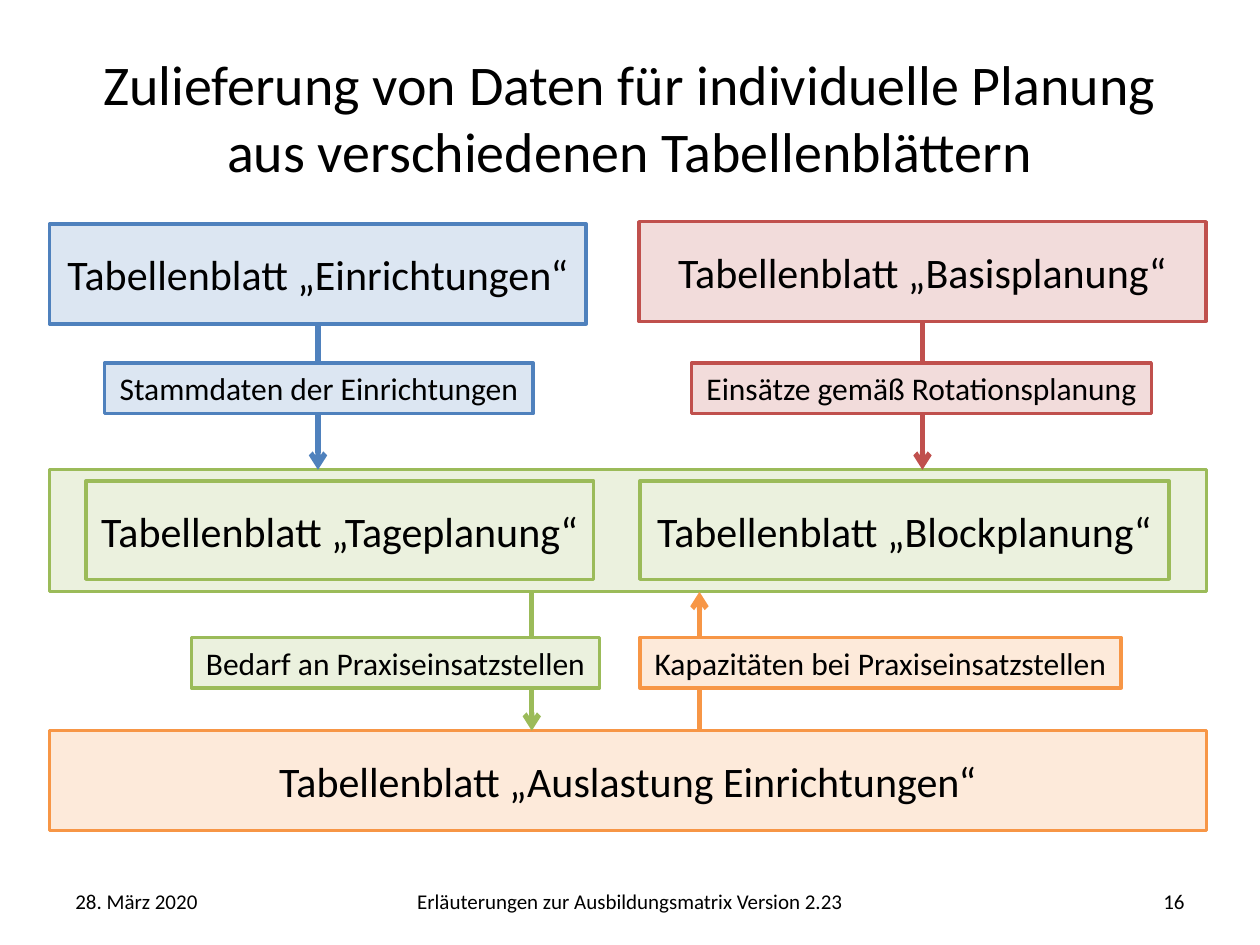
from lxml import etree
from pptx import Presentation
from pptx.dml.color import RGBColor
from pptx.enum.shapes import MSO_CONNECTOR, MSO_SHAPE
from pptx.enum.text import MSO_ANCHOR, MSO_AUTO_SIZE, PP_ALIGN
from pptx.oxml.ns import qn
from pptx.util import Cm, Pt

RECTANGLE = MSO_SHAPE.RECTANGLE
STRAIGHT = MSO_CONNECTOR.STRAIGHT
MIDDLE = MSO_ANCHOR.MIDDLE
GROW = MSO_AUTO_SIZE.SHAPE_TO_FIT_TEXT
LEFT, CENTER, RIGHT = PP_ALIGN.LEFT, PP_ALIGN.CENTER, PP_ALIGN.RIGHT
BOTTOM_SIDE = 2

FONT = "Calibri"
COLORS = {
    "text": "000000",
    "blue": "4F81BD", "blue_fill": "DCE6F2",
    "red": "C0504D", "red_fill": "F2DCDB",
    "green": "9BBB59", "green_fill": "EBF1DE",
    "orange": "F79646", "orange_fill": "FDEADA",
}

# Shared measures in cm
MARGIN, FULL_WIDTH = 1, 23.32
SHEET_HEIGHT, LABEL_HEIGHT = 2.01, 1.02
PLANNING_TOP, PLANNING_HEIGHT = 9.47, 2.46
PLANNING_BOTTOM = PLANNING_TOP + PLANNING_HEIGHT
CAPACITY_TOP = 14.73


def color(name):
    return RGBColor.from_string(COLORS[name])


def write_text(shape, text, size=24, align=CENTER, wrap=True):
    frame = shape.text_frame
    frame.word_wrap = wrap
    frame.vertical_anchor = MIDDLE
    paragraph = frame.paragraphs[0]
    paragraph.alignment = align
    run = paragraph.add_run()
    run.text = text
    run.font.name = FONT
    run.font.size = Pt(size)
    run.font.color.rgb = color("text")


def add_text(slide, text, left, top, width, height, **text_format):
    box = slide.shapes.add_textbox(Cm(left), Cm(top), Cm(width), Cm(height))
    write_text(box, text, **text_format)


def add_box(slide, hue, left, top, width, height):
    box = slide.shapes.add_shape(RECTANGLE, Cm(left), Cm(top), Cm(width), Cm(height))
    box.shadow.inherit = False
    box.fill.solid()
    box.fill.fore_color.rgb = color(hue + "_fill")
    box.line.color.rgb = color(hue)
    box.line.width = Pt(2)
    return box


def add_sheet(slide, name, hue, left, top, width, height=SHEET_HEIGHT):
    sheet = add_box(slide, hue, left, top, width, height)
    write_text(sheet, f"Tabellenblatt „{name}“")
    return sheet


def add_label(slide, text, hue, left, top, width):
    label = add_box(slide, hue, left, top, width, LABEL_HEIGHT)
    write_text(label, text, size=18, wrap=False)
    label.text_frame.auto_size = GROW


def add_arrow(slide, hue, x, start, end, source=None):
    arrow = slide.shapes.add_connector(STRAIGHT, Cm(x), Cm(start), Cm(x), Cm(end))
    if source is not None:
        arrow.begin_connect(source, BOTTOM_SIDE)
        arrow.end_x = arrow.begin_x
    arrow.line.color.rgb = color(hue)
    arrow.line.width = Pt(3)
    etree.SubElement(arrow.line._get_or_add_ln(), qn("a:tailEnd"), type="arrow")
    etree.SubElement(arrow._element.spPr, qn("a:effectLst"))


def main():
    prs = Presentation()
    prs.slide_width, prs.slide_height = Cm(25.4), Cm(19.05)
    slide = prs.slides.add_slide(prs.slide_layouts[6])

    # Title
    add_text(slide, "Zulieferung von Daten für individuelle Planung "
             "aus verschiedenen Tabellenblättern", 1.27, 0.76, 22.86, 3.18, size=32)

    # Individual planning: two sheets in a common frame
    add_box(slide, "green", MARGIN, PLANNING_TOP, FULL_WIDTH, PLANNING_HEIGHT)
    for name, left, width in (("Tageplanung", 1.73, 10.24),
                              ("Blockplanung", 12.9, 10.67)):
        add_sheet(slide, name, "green", left, 9.7, width, 1.98)

    # Supplying sheets and the sheet for capacity use
    facilities = add_sheet(slide, "Einrichtungen", "blue", MARGIN, 4.52, 10.82)
    base_plan = add_sheet(slide, "Basisplanung", "red", 12.88, 4.47, 11.43)
    add_sheet(slide, "Auslastung Einrichtungen", "orange",
              MARGIN, CAPACITY_TOP, FULL_WIDTH)

    # Data flows
    add_arrow(slide, "blue", 6.41, 6.53, PLANNING_TOP, source=facilities)
    add_arrow(slide, "red", 18.6, 6.48, PLANNING_TOP, source=base_plan)
    add_arrow(slide, "green", 10.72, PLANNING_BOTTOM, CAPACITY_TOP)
    add_arrow(slide, "orange", 14.1, CAPACITY_TOP, PLANNING_BOTTOM)

    # Labels on the data flows
    for text, hue, left, top, width in (
        ("Stammdaten der Einrichtungen", "blue", 2.11, 7.32, 8.64),
        ("Einsätze gemäß Rotationsplanung", "red", 13.94, 7.32, 9.27),
        ("Kapazitäten bei Praxiseinsatzstellen", "orange", 12.9, 12.85, 9.7),
        ("Bedarf an Praxiseinsatzstellen", "green", 3.86, 12.85, 8.23),
    ):
        add_label(slide, text, hue, left, top, width)

    # Footer
    for text, left, width, align in (
        ("28. März 2020", 1.27, 5.92, LEFT),
        ("Erläuterungen zur Ausbildungsmatrix Version 2.23", 6.5, 12.4, CENTER),
        ("16", 18.21, 5.92, RIGHT),
    ):
        add_text(slide, text, left, 17.65, width, 1.02, size=12, align=align)

    prs.save("out.pptx")


if __name__ == "__main__":
    main()
